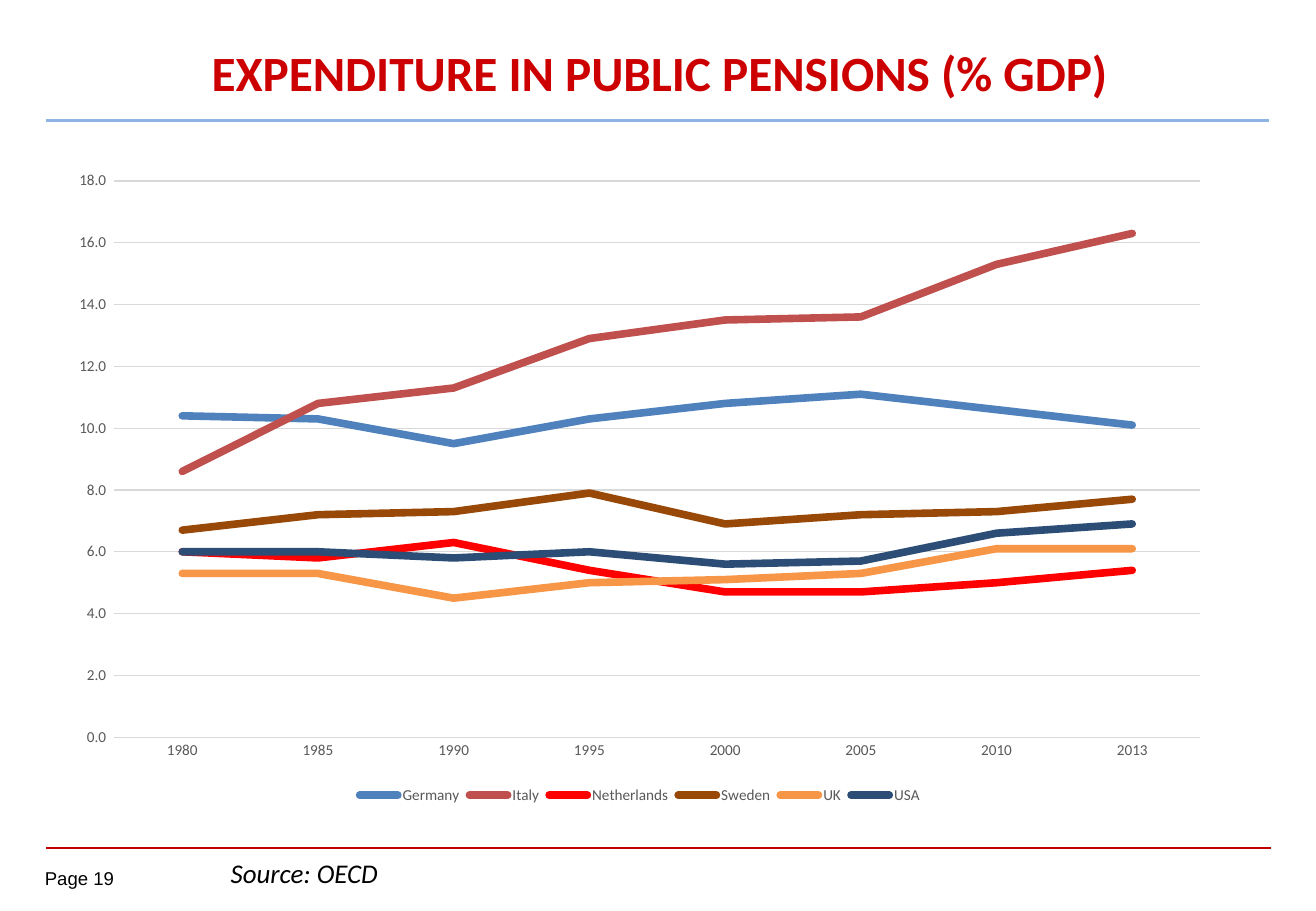
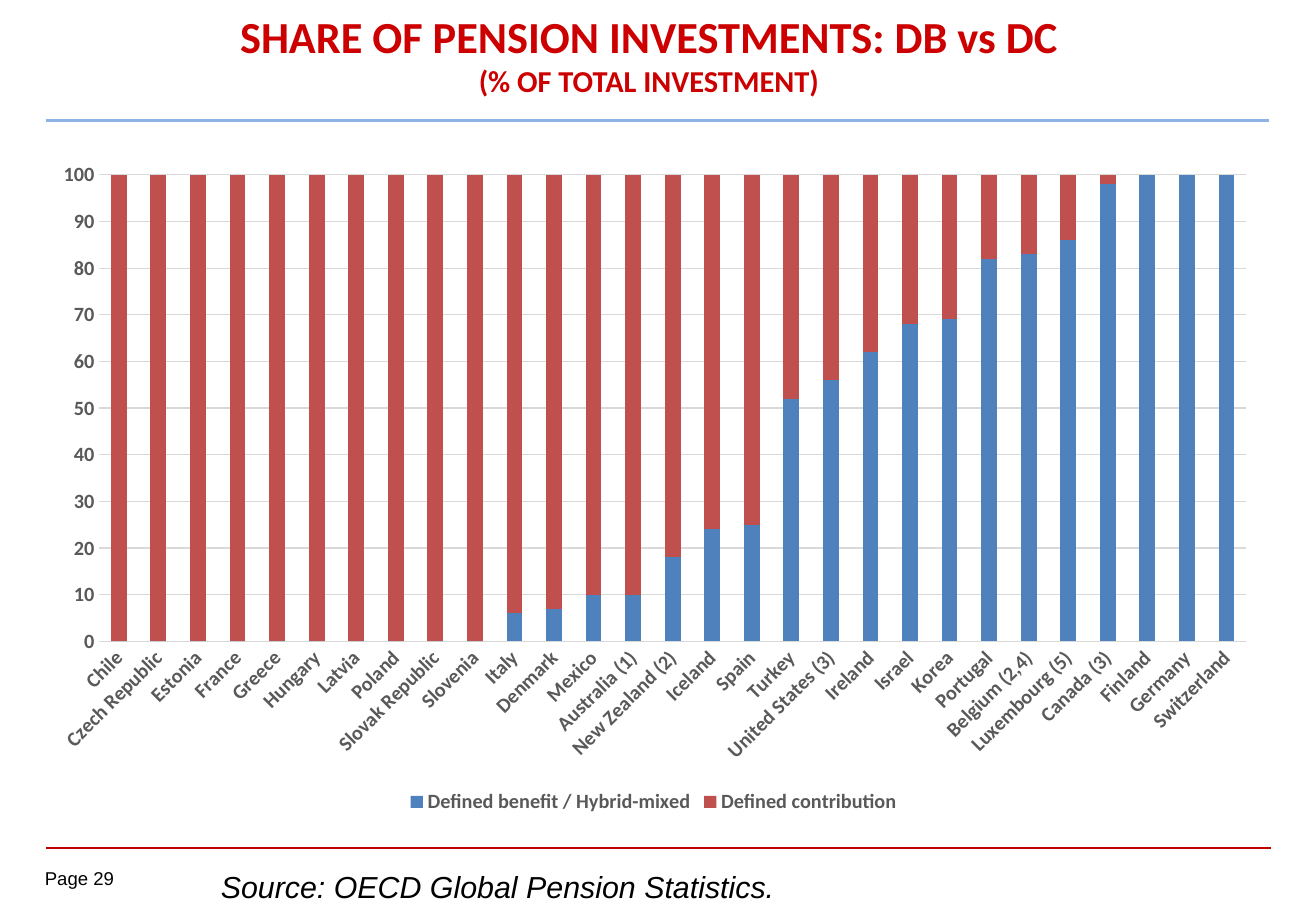
"""Build two pension slides, each with a title, a chart and a source line."""
from dataclasses import dataclass

from lxml import etree
from pptx import Presentation
from pptx.chart.data import CategoryChartData
from pptx.dml.color import RGBColor
from pptx.enum.chart import XL_CHART_TYPE, XL_LEGEND_POSITION, XL_TICK_MARK
from pptx.enum.shapes import MSO_CONNECTOR
from pptx.enum.text import MSO_ANCHOR, MSO_AUTO_SIZE, PP_ALIGN
from pptx.oxml.ns import qn
from pptx.util import Pt

LINE_CHART = XL_CHART_TYPE.LINE
STACKED_CHART = XL_CHART_TYPE.COLUMN_STACKED
LEGEND_BOTTOM = XL_LEGEND_POSITION.BOTTOM
NO_TICK = XL_TICK_MARK.NONE
STRAIGHT = MSO_CONNECTOR.STRAIGHT
MIDDLE = MSO_ANCHOR.MIDDLE
NO_AUTOFIT = MSO_AUTO_SIZE.NONE
CENTER = PP_ALIGN.CENTER


@dataclass(frozen=True)
class Theme:
    title: str = "CC0000"
    text: str = "000000"
    label: str = "595959"
    grid: str = "D9D9D9"
    top_rule: str = "8EB4E3"
    bottom_rule: str = "C00000"
    blue: str = "4F81BD"
    brick: str = "C0504D"
    red: str = "FF0000"
    brown: str = "984807"
    orange: str = "F79646"
    navy: str = "2C4D75"
    main_font: str = "Calibri"
    plain_font: str = "Arial"
    page_size: float = 11
    chart_size: float = 10
    series_width: float = 4.5
    grid_width: float = 0.75


theme = Theme()


def style_font(font, name, size, color, bold=False, italic=False):
    font.name, font.size = name, Pt(size)
    font.bold, font.italic = bold, italic
    font.color.rgb = RGBColor.from_string(color)


def style_line(line, color, width):
    line.color.rgb = RGBColor.from_string(color)
    line.width = Pt(width)


RULES = [
    (27.4, 753.1, 502.6, theme.bottom_rule, 1),
    (27.4, 751.7, 71.3, theme.top_rule, 1.5),
]

defined_benefit = [0] * 10 + [6, 7, 10, 10, 18, 24, 25, 52, 56, 62, 68, 69,
                              82, 83, 86, 98, 100, 100, 100]

PAGES = [
    {
        "number": 19,
        "title": [("EXPENDITURE IN PUBLIC PENSIONS (% GDP)", 29.2)],
        "title_at": (95, 9.4, 591.8, 64),
        "title_spacing": 1.05,
        "chart_type": LINE_CHART,
        "chart_at": (33.1, 94.3, 691.9, 385.2),
        "axis_size": 9,
        "axis_bold": False,
        "axis_top": 18,
        "axis_step": 2,
        "number_format": "#,##0.0_ ;\\-#,##0.0\\ ",
        "categories": ["1980", "1985", "1990", "1995", "2000", "2005", "2010", "2013"],
        "series": [
            ("Germany", theme.blue, [10.4, 10.3, 9.5, 10.3, 10.8, 11.1, 10.6, 10.1]),
            ("Italy", theme.brick, [8.6, 10.8, 11.3, 12.9, 13.5, 13.6, 15.3, 16.3]),
            ("Netherlands", theme.red, [6, 5.8, 6.3, 5.4, 4.7, 4.7, 5, 5.4]),
            ("Sweden", theme.brown, [6.7, 7.2, 7.3, 7.9, 6.9, 7.2, 7.3, 7.7]),
            ("UK", theme.orange, [5.3, 5.3, 4.5, 5, 5.1, 5.3, 6.1, 6.1]),
            ("USA", theme.navy, [6, 6, 5.8, 6, 5.6, 5.7, 6.6, 6.9]),
        ],
        "source": ("Source: OECD", theme.main_font, 16),
        "source_at": (129.6, 504, 601.2, 26.6),
    },
    {
        "number": 29,
        "title": [("SHARE OF PENSION INVESTMENTS: DB vs DC", 26.3),
                  ("(% OF TOTAL INVESTMENT)", 18)],
        "title_at": (27.4, 6.5, 714.2, 51.1),
        "title_spacing": 1.0,
        "chart_type": STACKED_CHART,
        "chart_at": (21.6, 88.6, 731.5, 396.7),
        "axis_size": 12,
        "axis_bold": True,
        "axis_top": 100,
        "axis_step": 10,
        "number_format": "0",
        "categories": [
            "Chile", "Czech Republic", "Estonia", "France", "Greece", "Hungary",
            "Latvia", "Poland", "Slovak Republic", "Slovenia", "Italy", "Denmark",
            "Mexico", "Australia (1)", "New Zealand (2)", "Iceland", "Spain",
            "Turkey", "United States (3)", "Ireland", "Israel", "Korea", "Portugal",
            "Belgium (2,4)", "Luxembourg (5)", "Canada (3)", "Finland", "Germany",
            "Switzerland",
        ],
        "series": [
            ("Defined benefit / Hybrid-mixed", theme.blue, defined_benefit),
            ("Defined contribution", theme.brick,
             [100 - share for share in defined_benefit]),
        ],
        "source": ("Source: OECD Global Pension Statistics.", theme.plain_font, 18),
        "source_at": (123.8, 511.2, 385.9, 28.8),
    },
]

deck = Presentation()
deck.slide_width, deck.slide_height = Pt(779.8), Pt(540)
title_only = deck.slide_layouts[5]

for page in PAGES:
    slide = deck.slides.add_slide(title_only)

    for left, right, y, color, width in RULES:
        rule = slide.shapes.add_connector(STRAIGHT, Pt(left), Pt(y), Pt(right), Pt(y))
        style_line(rule.line, color, width)
        etree.SubElement(rule._element.spPr, qn("a:effectLst"))

    page_box = slide.shapes.add_textbox(Pt(26.6), Pt(514.1), Pt(52.6), Pt(15.8))
    frame = page_box.text_frame
    frame.margin_left = frame.margin_top = frame.margin_right = frame.margin_bottom = 0
    span = frame.paragraphs[0].add_run()
    span.text = f"Page {page['number']}"
    style_font(span.font, theme.plain_font, theme.page_size, theme.text)

    title = slide.shapes.title
    title.left, title.top, title.width, title.height = map(Pt, page["title_at"])
    frame = title.text_frame
    frame.word_wrap = True
    frame.auto_size = NO_AUTOFIT
    frame.vertical_anchor = MIDDLE
    para = frame.paragraphs[0]
    para.alignment = CENTER
    para.line_spacing = page["title_spacing"]
    for index, (text, size) in enumerate(page["title"]):
        if index:
            para.add_line_break()
        span = para.add_run()
        span.text = text
        style_font(span.font, theme.main_font, size, theme.title, bold=True)

    chart_data = CategoryChartData()
    chart_data.categories = page["categories"]
    for name, color, values in page["series"]:
        chart_data.add_series(name, values)
    chart = slide.shapes.add_chart(
        page["chart_type"], *map(Pt, page["chart_at"]), chart_data).chart
    chart.has_title = False
    style_font(chart.font, theme.main_font, theme.chart_size, theme.text)
    chart.has_legend = True
    chart.legend.position = LEGEND_BOTTOM
    chart.legend.include_in_layout = False

    category_axis, value_axis = chart.category_axis, chart.value_axis
    for font in (chart.legend.font, category_axis.tick_labels.font,
                 value_axis.tick_labels.font):
        style_font(font, theme.main_font, page["axis_size"], theme.label,
                   bold=page["axis_bold"])
    for axis in (category_axis, value_axis):
        axis.major_tick_mark = axis.minor_tick_mark = NO_TICK
    style_line(category_axis.format.line, theme.grid, theme.grid_width)
    value_axis.format.line.fill.background()
    value_axis.has_major_gridlines = True
    style_line(value_axis.major_gridlines.format.line, theme.grid, theme.grid_width)
    value_axis.minimum_scale, value_axis.maximum_scale = 0, page["axis_top"]
    value_axis.major_unit = page["axis_step"]
    value_axis.tick_labels.number_format = page["number_format"]
    value_axis.tick_labels.number_format_is_linked = False

    plot = chart.plots[0]
    plot.vary_by_categories = False
    if page["chart_type"] == STACKED_CHART:
        plot.gap_width, plot.overlap = 150, 100
        category_axis._element.txPr.bodyPr.set("rot", "-2700000")
    for series, (name, color, values) in zip(plot.series, page["series"]):
        if page["chart_type"] == LINE_CHART:
            series.smooth = False
            style_line(series.format.line, color, theme.series_width)
            series._element.spPr.find(qn("a:ln")).set("cap", "rnd")
        else:
            series.format.fill.solid()
            series.format.fill.fore_color.rgb = RGBColor.from_string(color)

    source_box = slide.shapes.add_textbox(*map(Pt, page["source_at"]))
    source_box.text_frame.word_wrap = True
    span = source_box.text_frame.paragraphs[0].add_run()
    text, font_name, size = page["source"]
    span.text = text
    style_font(span.font, font_name, size, theme.text, italic=True)

deck.save("out.pptx")
